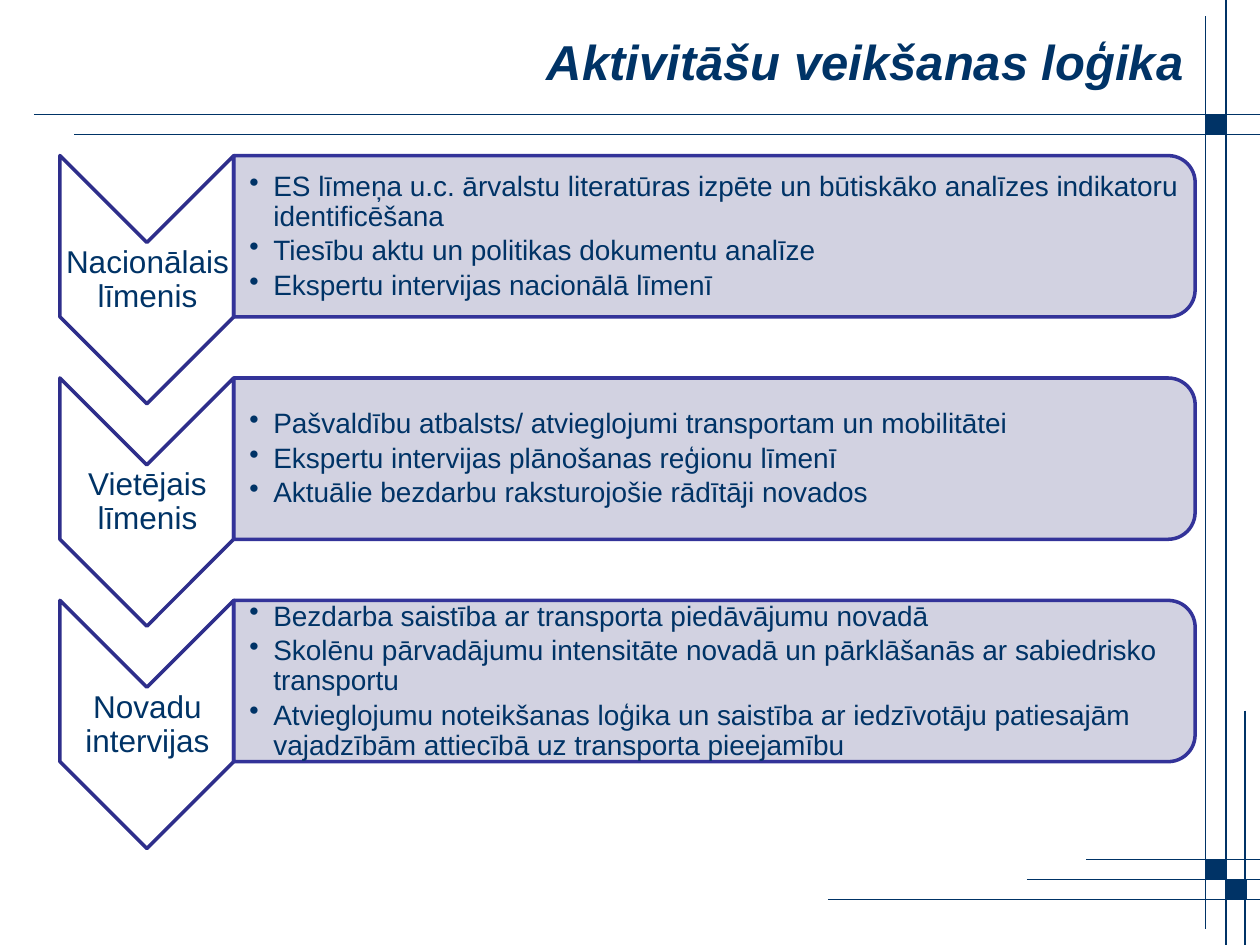
from lxml.etree import SubElement
from pptx import Presentation
from pptx.dml.color import RGBColor
from pptx.enum.shapes import MSO_CONNECTOR as Link, MSO_SHAPE as Kind
from pptx.enum.text import MSO_ANCHOR as Anchor, PP_ALIGN as Align
from pptx.oxml.ns import qn
from pptx.util import Inches, Pt

NAVY = RGBColor(0x00, 0x33, 0x66)
WHITE = RGBColor(0xFF, 0xFF, 0xFF)
INDIGO = RGBColor(0x2E, 0x2E, 0x8B)
BLUE = RGBColor(0x33, 0x33, 0x99)
LILAC = RGBColor(0xCE, 0xCE, 0xDE)

RULES = [
    (0.27, 0.91, 10, 0.91), (0.59, 1.07, 10, 1.07),
    (9.73, 0, 9.73, 7.5), (9.57, 0.13, 9.57, 7.37),
    (8.15, 6.98, 10, 6.98), (8.62, 6.82, 10, 6.82),
    (6.57, 7.14, 10, 7.14), (9.88, 5.64, 9.88, 7.5),
]
SQUARES = [(9.57, 0.91), (9.57, 6.82), (9.73, 6.98)]
SIDE = 0.16

TITLE = {"size": Pt(28), "bold": True, "italic": True}
LABEL = {"size": Pt(18)}
POINT = {"size": Pt(16)}
LABEL_PARA = {"alignment": Align.CENTER, "line_spacing": 0.9, "space_after": Pt(6.3)}
POINT_PARA = {"line_spacing": 0.9, "space_after": Pt(2.4)}

TOP = 1.3
STEP = 3.53 / 2
LEVELS = [
    ("Nacionālais līmenis", [
        "ES līmeņa u.c. ārvalstu literatūras izpēte un būtiskāko analīzes "
        "indikatoru identificēšana",
        "Tiesību aktu un politikas dokumentu analīze",
        "Ekspertu intervijas nacionālā līmenī"]),
    ("Vietējais līmenis", [
        "Pašvaldību atbalsts/ atvieglojumi transportam un mobilitātei",
        "Ekspertu intervijas plānošanas reģionu līmenī",
        "Aktuālie bezdarbu raksturojošie rādītāji novados"]),
    ("Novadu intervijas", [
        "Bezdarba saistība ar transporta piedāvājumu novadā",
        "Skolēnu pārvadājumu intensitāte novadā un pārklāšanās ar "
        "sabiedrisko transportu",
        "Atvieglojumu noteikšanas loģika un saistība ar iedzīvotāju "
        "patiesajām vajadzībām attiecībā uz transporta pieejamību"]),
]


def put(item, values):
    for name, value in values.items():
        setattr(item, name, value)


def add_rule(slide, ends):
    line = slide.shapes.add_connector(Link.STRAIGHT, *map(Inches, ends))
    line.line.color.rgb = NAVY
    line.line.width = Pt(0.75)
    SubElement(line._element.spPr, qn("a:effectLst"))


def add_form(slide, kind, box, fill, edge, width, turn=0):
    form = slide.shapes.add_shape(kind, *map(Inches, box))
    form.rotation = turn
    form.shadow.inherit = False
    form.fill.solid()
    form.fill.fore_color.rgb = fill
    form.line.color.rgb = edge
    form.line.width = Pt(width)
    return form


def fade(form, share):
    """Set the opacity of a solid fill, in percent."""
    tint = form._element.spPr.find(qn("a:solidFill"))[0]
    SubElement(tint, qn("a:alpha"), val=str(share * 1000))


def add_bullet(para):
    props = para._p.get_or_add_pPr()
    props.set("marL", str(Inches(0.19)))
    props.set("indent", str(-Inches(0.19)))
    SubElement(props, qn("a:buChar"), char="•")


def add_text(slide, box, lines, font, para_set, frame_set, bullets=False):
    frame = slide.shapes.add_textbox(*map(Inches, box)).text_frame
    put(frame, {"word_wrap": True, "vertical_anchor": Anchor.MIDDLE, **frame_set})
    for i, line in enumerate(lines):
        para = frame.add_paragraph() if i else frame.paragraphs[0]
        if bullets:
            add_bullet(para)
        put(para, para_set)
        run = para.add_run()
        run.text = line
        put(run.font, {"name": "Arial", **font})
        run.font.color.rgb = NAVY


def add_level(slide, top, label, points):
    edges = ("margin_left", "margin_top", "margin_right", "margin_bottom")
    tight = dict.fromkeys(edges, Inches(0.01))
    add_form(slide, Kind.CHEVRON, (0.18, top + 0.23, 1.97, 1.38),
             WHITE, INDIGO, 2, 90)
    add_text(slide, (0.48, top + 0.63, 1.38, 0.59), [label],
             LABEL, LABEL_PARA, tight)
    panel = add_form(slide, Kind.ROUND_2_SAME_RECTANGLE,
                     (5.03, top - 3.24, 1.28, 7.63), LILAC, BLUE, 2, 90)
    fade(panel, 90)
    add_text(slide, (1.86, top, 7.57, 1.16), points, POINT, POINT_PARA,
             {**tight, "margin_left": Inches(0.12)}, bullets=True)


def main():
    deck = Presentation()
    deck.slide_width, deck.slide_height = Inches(10), Inches(7.5)
    slide = deck.slides.add_slide(deck.slide_layouts[6])
    for ends in RULES:
        add_rule(slide, ends)
    for left, top in SQUARES:
        add_form(slide, Kind.RECTANGLE, (left, top, SIDE, SIDE), NAVY, NAVY, 0.75)
    add_text(slide, (0.51, 0.13, 8.98, 0.71), ["Aktivitāšu veikšanas loģika"],
             TITLE, {"alignment": Align.RIGHT}, {})
    for i, (label, points) in enumerate(LEVELS):
        add_level(slide, TOP + i * STEP, label, points)
    deck.save("out.pptx")


if __name__ == "__main__":
    main()
